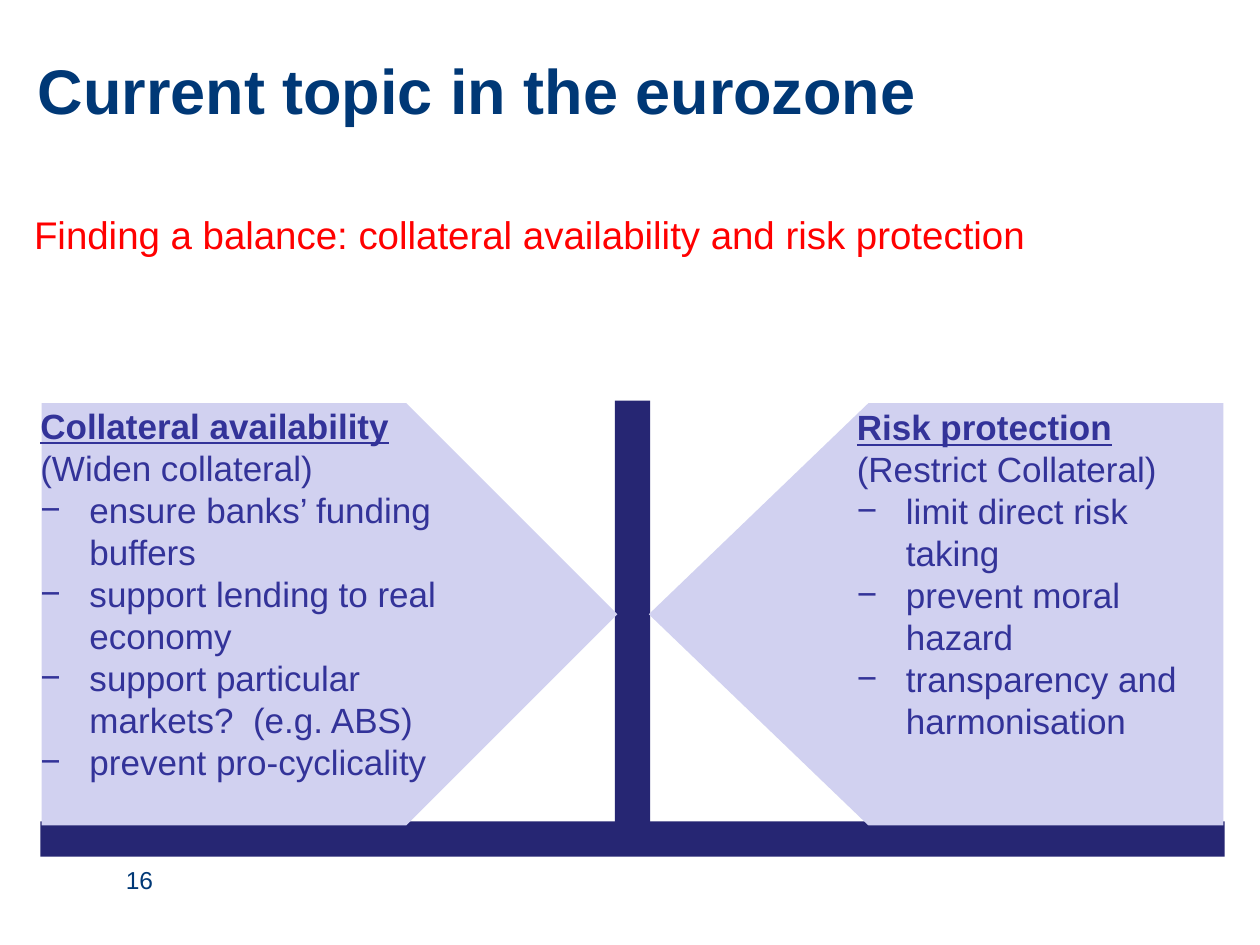
from lxml.etree import SubElement
from pptx import Presentation
from pptx.dml.color import RGBColor
from pptx.enum.shapes import MSO_SHAPE as Shape
from pptx.oxml.ns import qn
from pptx.util import Inches, Pt

COLORS = {
    "beam": "262673",
    "panel": "D1D1F0",
    "title": "003876",
    "subtitle": "FF0000",
    "body": "333399",
}
FONT = "Arial"

deck = Presentation()
deck.slide_width, deck.slide_height = Inches(10), Inches(7.5)
page = deck.slides.add_slide(deck.slide_layouts[6])


def share(left, top, width, height):
    """Turn percentages of the slide's width and height into lengths."""
    return (
        int(deck.slide_width * left / 100),
        int(deck.slide_height * top / 100),
        int(deck.slide_width * width / 100),
        int(deck.slide_height * height / 100),
    )


def add_text(area, lines, size, color, bold_first=False, underline_first=False,
             spacing=None, inset=0, dash_from=None):
    """Add a text box; lines from index dash_from on get a hanging dash."""
    box = page.shapes.add_textbox(*share(*area))
    frame = box.text_frame
    frame.word_wrap = True
    frame.margin_left = frame.margin_right = Inches(inset)
    frame.margin_top = frame.margin_bottom = Inches(inset / 2)
    for index, line in enumerate(lines):
        para = frame.add_paragraph() if index else frame.paragraphs[0]
        if spacing:
            para.line_spacing = spacing
        if dash_from is not None and index >= dash_from:
            props = para._p.get_or_add_pPr()
            props.set("marL", str(Inches(0.39)))
            props.set("indent", str(-Inches(0.39)))
            SubElement(props, qn("a:buFont"), typeface=FONT)
            SubElement(props, qn("a:buChar"), char="−")
        span = para.add_run()
        span.text = line
        span.font.name = FONT
        span.font.size = Pt(size)
        span.font.color.rgb = RGBColor.from_string(COLORS[color])
        span.font.bold = bold_first and index == 0
        span.font.underline = underline_first and index == 0


# Scale: post, base and the two plates that meet at the post
for kind, area, color, flipped, point in [
    (Shape.RECTANGLE, (48.8, 42.4, 2.8, 44.67), "beam", False, None),
    (Shape.RECTANGLE, (3.2, 86.93, 94, 3.73), "beam", False, None),
    (Shape.PENTAGON, (3.3, 42.67, 45.7, 44.67), "panel", False, 0.5),
    (Shape.PENTAGON, (51.5, 42.67, 45.6, 44.67), "panel", True, 0.52),
]:
    part = page.shapes.add_shape(kind, *share(*area))
    part.shadow.inherit = False
    part.fill.solid()
    part.fill.fore_color.rgb = RGBColor.from_string(COLORS[color])
    part.line.fill.background()
    if point:
        part.adjustments[0] = point
    if flipped:
        part._element.spPr.find(qn("a:xfrm")).set("flipH", "1")

add_text((3, 8.4, 94, 6.8), ["Current topic in the eurozone"], 36, "title",
         bold_first=True, spacing=Pt(27))
add_text((2.7, 21.6, 94.5, 5.6),
         ["Finding a balance: collateral availability and risk protection"],
         22, "subtitle", spacing=1.14)

for area, lines in [
    ((3.2, 42.8, 36.2, 40.4), [
        "Collateral availability",
        "(Widen collateral)",
        "ensure banks’ funding buffers",
        "support lending to real economy",
        "support particular markets?  (e.g. ABS)",
        "prevent pro-cyclicality",
    ]),
    ((68, 42.93, 28.9, 35.87), [
        "Risk protection",
        "(Restrict Collateral)",
        "limit direct risk taking",
        "prevent moral hazard",
        "transparency and harmonisation",
    ]),
]:
    add_text(area, lines, 20, "body", bold_first=True, underline_first=True,
             spacing=Pt(24), dash_from=2)

add_text((9, 90.93, 19.4, 6.93), ["16"], 14, "title", inset=0.1)

deck.save("out.pptx")
